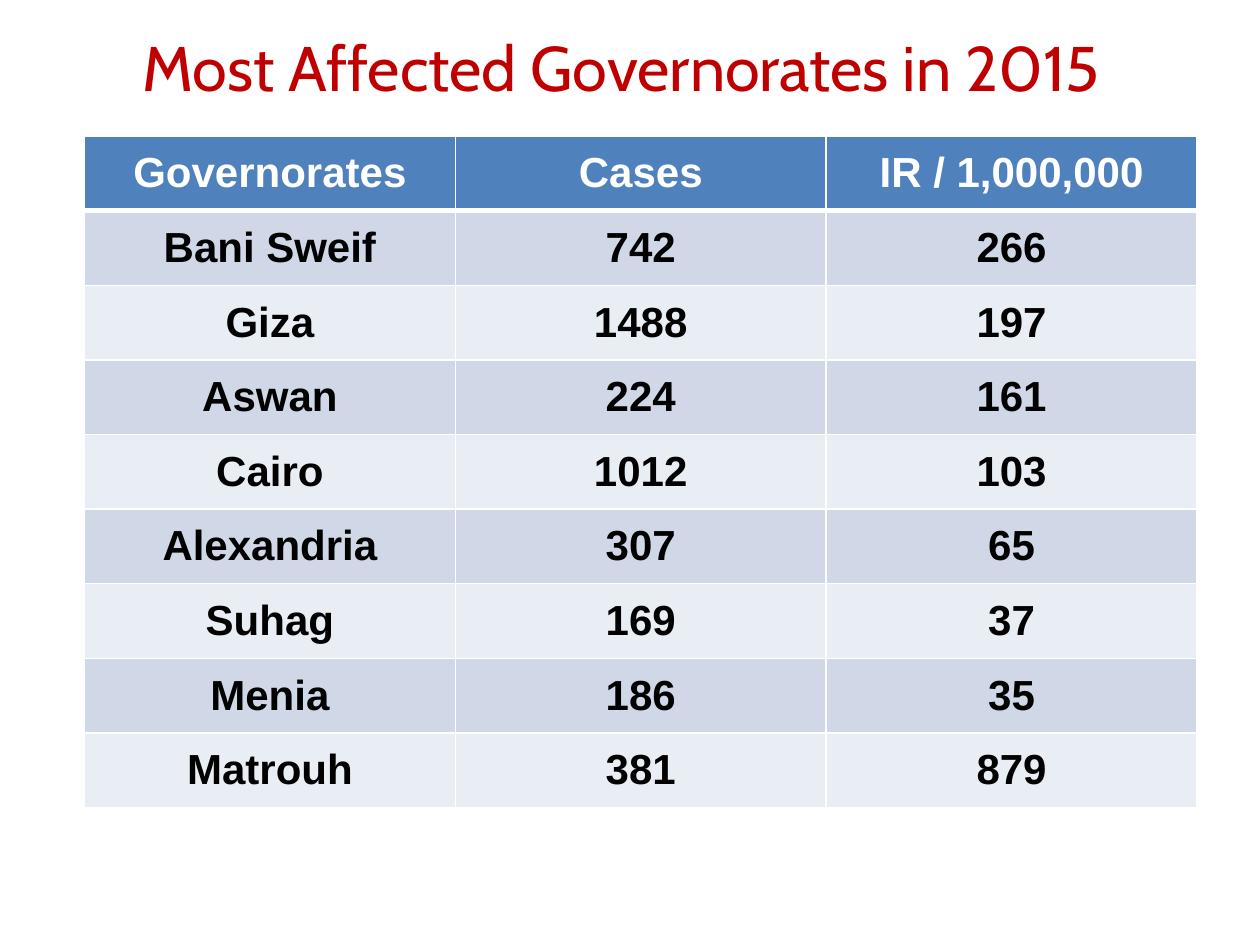
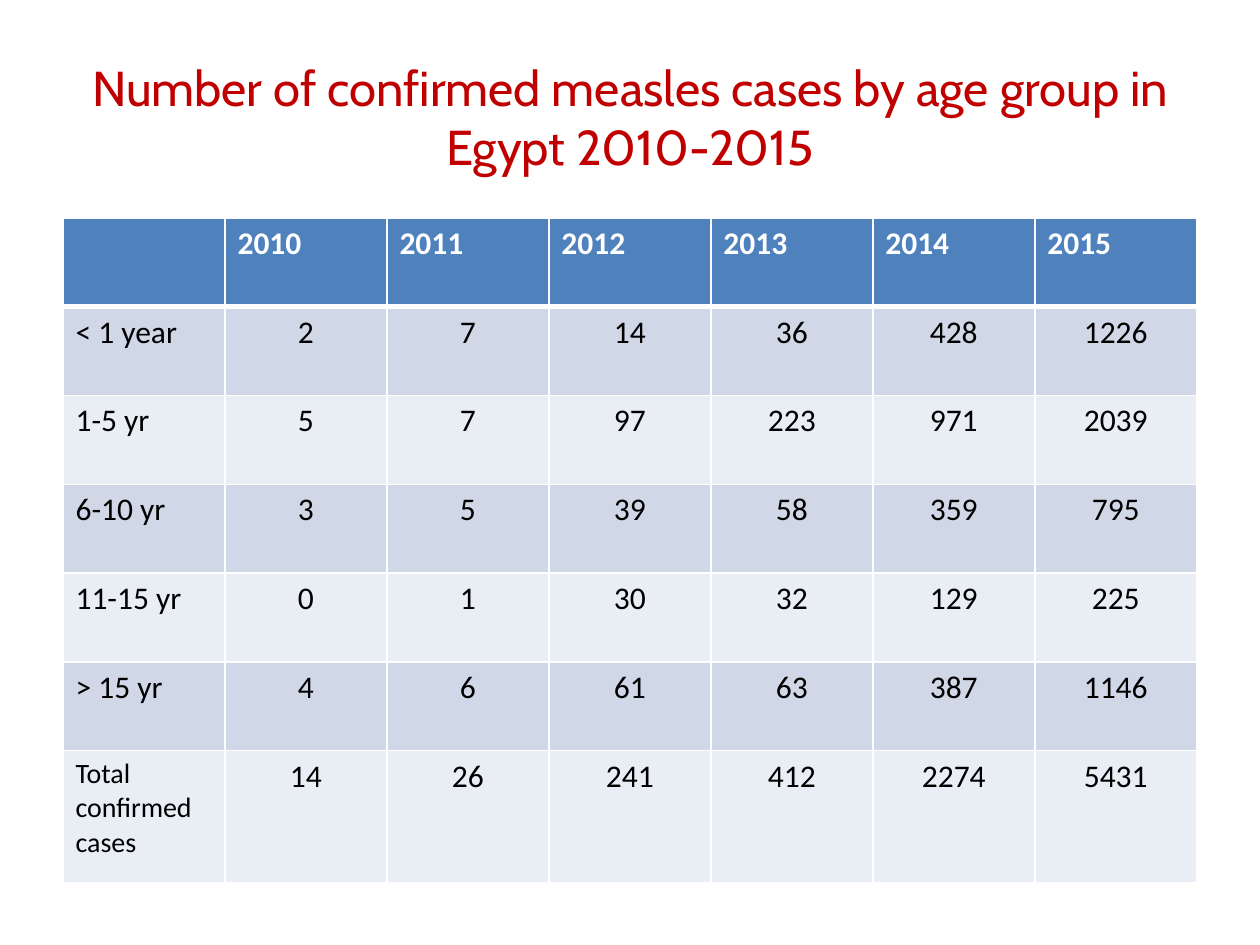
from lxml.etree import SubElement
from pptx import Presentation
from pptx.dml.color import RGBColor
from pptx.enum.text import MSO_ANCHOR, PP_ALIGN
from pptx.oxml.ns import qn
from pptx.util import Inches, Pt

# Shared look
TITLE_RED = RGBColor(0xC0, 0x00, 0x00)
HEADER_BLUE = RGBColor(0x4F, 0x81, 0xBD)
BAND_DARK = RGBColor(0xD0, 0xD8, 0xE8)
BAND_LIGHT = RGBColor(0xE9, 0xED, 0xF4)
WHITE = RGBColor(0xFF, 0xFF, 0xFF)
BLACK = RGBColor(0x00, 0x00, 0x00)
TITLE_FONT = "Cabin"
TITLE_ONLY = 5

# Content: boxes are left, top, width, height in inches
pages = [
    {
        "title": "Most Affected Governorates in 2015",
        "title_box": (0.43, 0.13, 9, 0.8),
        "title_size": 36,
        "table_box": (0.67, 1.08, 8.83, 5.33),
        "last_row": 5.33 / 9,
        "font": {"name": "Arial", "size": Pt(24), "bold": True},
        "total_label_size": 24,
        "anchor": MSO_ANCHOR.MIDDLE,
        "edge_align": PP_ALIGN.CENTER,
        "rows": [
            ("Governorates", "Cases", "IR / 1,000,000"),
            ("Bani Sweif", 742, 266),
            ("Giza", 1488, 197),
            ("Aswan", 224, 161),
            ("Cairo", 1012, 103),
            ("Alexandria", 307, 65),
            ("Suhag", 169, 37),
            ("Menia", 186, 35),
            ("Matrouh", 381, 879),
        ],
    },
    {
        "title": "Number of confirmed measles cases by age group in Egypt 2010-2015",
        "title_box": (0.5, 0.3, 9, 1.25),
        "title_size": 28,
        "table_box": (0.5, 1.73, 9, 5.28),
        "last_row": 1.05,
        "font": {"name": "Calibri", "size": Pt(18), "bold": False},
        "total_label_size": 16,
        "anchor": MSO_ANCHOR.TOP,
        "edge_align": PP_ALIGN.LEFT,
        "rows": [
            ("", 2010, 2011, 2012, 2013, 2014, 2015),
            ("< 1 year", 2, 7, 14, 36, 428, 1226),
            ("1-5 yr", 5, 7, 97, 223, 971, 2039),
            ("6-10 yr", 3, 5, 39, 58, 359, 795),
            ("11-15 yr", 0, 1, 30, 32, 129, 225),
            ("> 15 yr", 4, 6, 61, 63, 387, 1146),
            ("Total confirmed cases", 14, 26, 241, 412, 2274, 5431),
        ],
    },
]


def set_borders(cell, widths):
    """Draw white cell borders; widths maps each side to points."""
    properties = cell._tc.get_or_add_tcPr()
    for side, width in widths.items():
        line = SubElement(properties, qn(f"a:ln{side}"), w=str(Pt(width)))
        fill = SubElement(line, qn("a:solidFill"))
        SubElement(fill, qn("a:srgbClr"), val=str(WHITE))


def write_text(para, text, align, font_values, color):
    """Put one formatted run into a paragraph."""
    para.alignment = align
    span = para.add_run()
    span.text = text
    for name, value in font_values.items():
        setattr(span.font, name, value)
    span.font.color.rgb = color


deck = Presentation()
deck.slide_width, deck.slide_height = Inches(10), Inches(7.5)

for page in pages:
    slide = deck.slides.add_slide(deck.slide_layouts[TITLE_ONLY])

    # Title
    title = slide.shapes.title
    for name, value in zip(("left", "top", "width", "height"), page["title_box"]):
        setattr(title, name, Inches(value))
    title.text_frame.word_wrap = True
    title.text_frame.vertical_anchor = MSO_ANCHOR.MIDDLE
    write_text(title.text_frame.paragraphs[0], page["title"], PP_ALIGN.CENTER,
               {"name": TITLE_FONT, "size": Pt(page["title_size"])}, TITLE_RED)

    # Table grid: equal columns, equal rows above the last one
    rows = page["rows"]
    left, top, width, height = page["table_box"]
    table = slide.shapes.add_table(
        len(rows), len(rows[0]),
        Inches(left), Inches(top), Inches(width), Inches(height)).table
    last = len(rows) - 1
    for column in table.columns:
        column.width = Inches(width / len(rows[0]))
    for row in table.rows:
        row.height = Inches((height - page["last_row"]) / last)
    table.rows[last].height = Inches(page["last_row"])

    # Table cells: header, then alternating bands
    for row_index, values in enumerate(rows):
        is_header = row_index == 0
        band = BAND_DARK if row_index % 2 else BAND_LIGHT
        for column_index, value in enumerate(values):
            cell = table.cell(row_index, column_index)
            set_borders(cell, {"L": 1, "R": 1, "T": 3 if row_index == 1 else 1,
                               "B": 3 if is_header else 1})
            cell.fill.solid()
            cell.fill.fore_color.rgb = HEADER_BLUE if is_header else band
            cell.vertical_anchor = page["anchor"]
            if value == "":
                continue
            font_values = dict(page["font"])
            if is_header:
                font_values["bold"] = True
            if row_index == last and column_index == 0:
                font_values["size"] = Pt(page["total_label_size"])
            on_edge = is_header or column_index == 0
            write_text(cell.text_frame.paragraphs[0], str(value),
                       page["edge_align"] if on_edge else PP_ALIGN.CENTER,
                       font_values, WHITE if is_header else BLACK)

deck.save("out.pptx")
